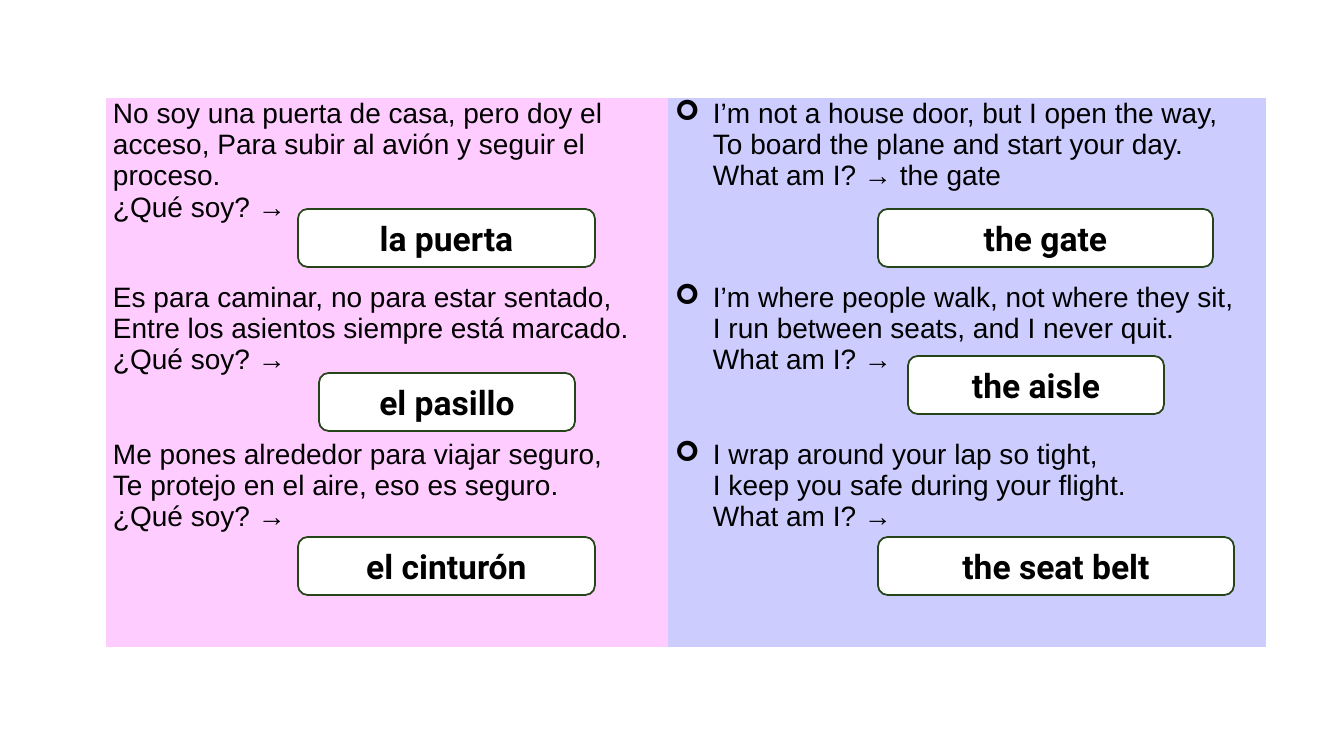
"""Build a slide of Spanish and English air travel riddles with answer boxes."""
from lxml.etree import SubElement
from pptx import Presentation
from pptx.dml.color import RGBColor
from pptx.enum.shapes import MSO_SHAPE
from pptx.enum.text import MSO_ANCHOR, PP_ALIGN
from pptx.oxml.ns import qn
from pptx.util import Pt

PX = 914400 / 100.8
PINK = RGBColor(0xFF, 0xCC, 0xFF)
LILAC = RGBColor(0xCC, 0xCC, 0xFF)
WHITE = RGBColor(0xFF, 0xFF, 0xFF)
BLACK = RGBColor(0, 0, 0)
GREEN = RGBColor(0x25, 0x45, 0x19)

RIDDLES = [
    (["No soy una puerta de casa, pero doy el acceso, Para subir al avión y seguir el proceso.",
      "¿Qué soy? →"],
     ["I’m not a house door, but I open the way,",
      "To board the plane and start your day.", "What am I? → the gate"]),
    (["Es para caminar, no para estar sentado,",
      "Entre los asientos siempre está marcado.", "¿Qué soy? →"],
     ["I’m where people walk, not where they sit,",
      "I run between seats, and I never quit.", "What am I? →"]),
    (["Me pones alrededor para viajar seguro,",
      "Te protejo en el aire, eso es seguro.", "¿Qué soy? →"],
     ["I wrap around your lap so tight,",
      "I keep you safe during your flight.", "What am I? →"]),
]
ANSWERS = [
    ("la puerta", 298, 209, 297), ("the gate", 878, 209, 335),
    ("el pasillo", 319, 373, 256), ("the aisle", 908, 356, 256),
    ("el cinturón", 298, 537, 297), ("the seat belt", 878, 537, 356),
]
COLUMNS = [562, 598]
ROWS = [184, 157, 208]


def px(n):
    return round(n * PX)


def add_text(p, text, font, size, bold=False):
    r = p.add_run()
    r.text = text
    r.font.name = font
    r.font.size = Pt(size)
    r.font.bold = bold
    r.font.color.rgb = BLACK


prs = Presentation()
prs.slide_width, prs.slide_height = px(1344), px(756)
s = prs.slides.add_slide(prs.slide_layouts[6])

table = s.shapes.add_table(len(ROWS), len(COLUMNS), px(106), px(98),
                           px(sum(COLUMNS)), px(sum(ROWS))).table
table.first_row = table.horz_banding = False
for column, width in zip(table.columns, COLUMNS):
    column.width = px(width)
for i, (height, riddle) in enumerate(zip(ROWS, RIDDLES)):
    table.rows[i].height = px(height)
    for j, lines in enumerate(riddle):
        cell = table.cell(i, j)
        cell.fill.solid()
        cell.fill.fore_color.rgb = (PINK, LILAC)[j]
        cell.margin_left = cell.margin_right = px(7)
        cell.margin_top = cell.margin_bottom = 0
        p = cell.text_frame.paragraphs[0]
        for k, line in enumerate(lines):
            if k:
                p.add_line_break()
            add_text(p, line, "Arial", 20)
        if j == 1:
            pPr = p._p.get_or_add_pPr()
            pPr.set("marL", str(px(38)))
            pPr.set("indent", str(px(-38)))
            SubElement(pPr, qn("a:buFont"), typeface="Wingdings")
            SubElement(pPr, qn("a:buChar"), char="➢")
        for br in p._p.findall(qn("a:br")):
            SubElement(br, qn("a:rPr"), sz="2000")
        for side in ("a:lnL", "a:lnR", "a:lnT", "a:lnB"):
            tcPr = cell._tc.get_or_add_tcPr()
            ln = tcPr.makeelement(qn(side), {"w": "0"})
            SubElement(ln, qn("a:noFill"))
            tcPr.insert(len(tcPr) - 1, ln)

for answer, left, top, width in ANSWERS:
    sp = s.shapes.add_shape(MSO_SHAPE.ROUNDED_RECTANGLE, px(left), px(top), px(width), px(58))
    sp.shadow.inherit = False
    sp.fill.solid()
    sp.fill.fore_color.rgb = WHITE
    sp.line.color.rgb = GREEN
    sp.line.width = Pt(1.25)
    tf = sp.text_frame
    tf.vertical_anchor = MSO_ANCHOR.MIDDLE
    p = tf.paragraphs[0]
    p.alignment = PP_ALIGN.CENTER
    add_text(p, answer, "Roboto", 24, True)

prs.save("out.pptx")
